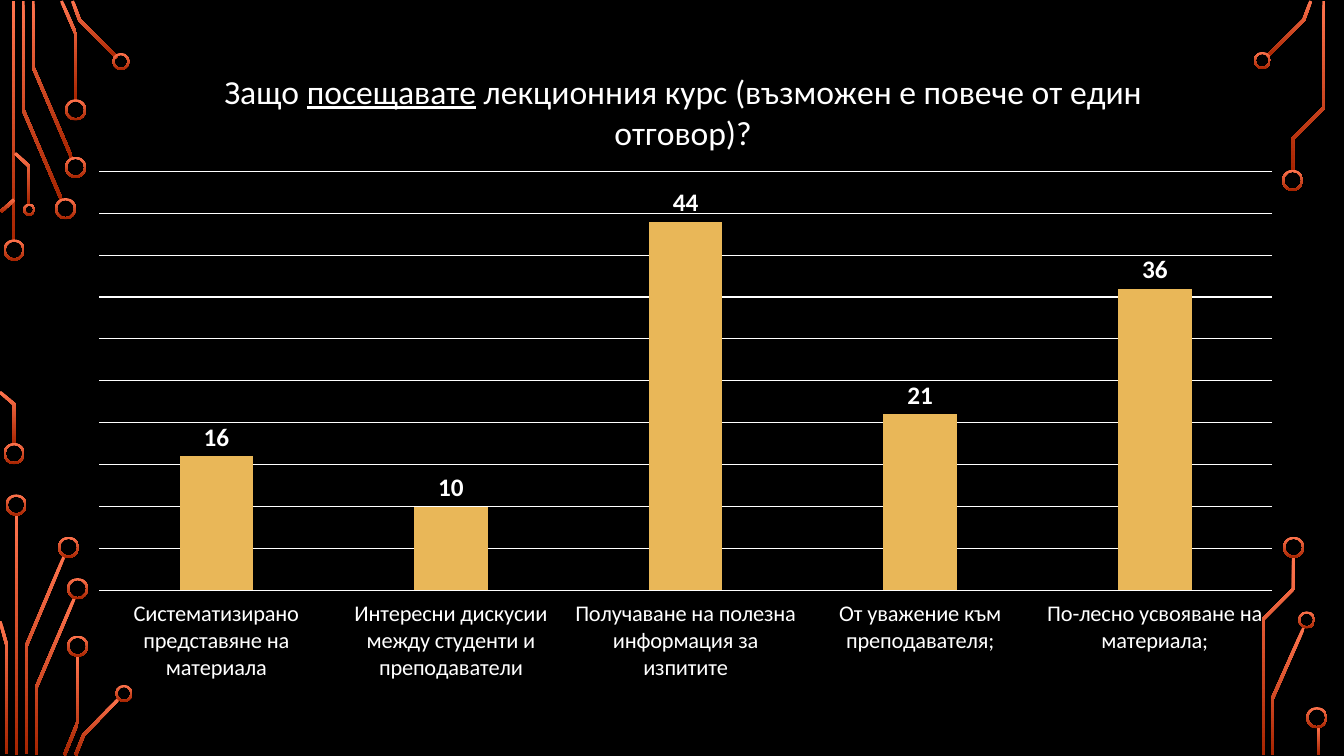
from dataclasses import dataclass
from math import hypot

from lxml.etree import SubElement
from pptx import Presentation
from pptx.chart.data import CategoryChartData
from pptx.dml.color import RGBColor
from pptx.enum.chart import XL_CHART_TYPE as ChartType
from pptx.enum.chart import XL_LABEL_POSITION as LabelPosition
from pptx.enum.chart import XL_TICK_LABEL_POSITION as TickLabels
from pptx.enum.chart import XL_TICK_MARK as TickMark
from pptx.enum.shapes import MSO_SHAPE as Preset
from pptx.oxml.ns import qn
from pptx.util import Inches, Pt

BLACK = RGBColor(0x00, 0x00, 0x00)
WHITE = RGBColor(0xFF, 0xFF, 0xFF)
GOLD = RGBColor(0xE9, 0xB7, 0x58)
ORANGE = RGBColor(0xFF, 0x74, 0x4E)
RUST = RGBColor(0xA6, 0x24, 0x00)
FONT = "Calibri"
TRACE_WIDTH = 0.03
RING_WALL = 0.02


@dataclass(frozen=True)
class Ring:
    x: float  # centre
    y: float
    size: float = 0.21


@dataclass(frozen=True)
class Bar:
    left: float
    top: float
    height: float


@dataclass(frozen=True)
class Trace:
    points: tuple[tuple[float, float], ...]  # centre line


RINGS = [
    # Top left
    Ring(0.14, 2.48), Ring(0.65, 2.07), Ring(0.75, 1.66), Ring(0.75, 1.09),
    Ring(1.2, 0.61, 0.17), Ring(0.29, 2.08, 0.12),
    # Bottom left
    Ring(0.14, 4.5), Ring(0.16, 5.01), Ring(0.68, 5.43), Ring(0.77, 5.84),
    Ring(0.77, 6.41), Ring(1.23, 6.88, 0.17),
    # Right
    Ring(12.52, 0.6, 0.17), Ring(12.82, 1.79), Ring(12.96, 6.15, 0.17),
    Ring(12.83, 5.43), Ring(13.06, 7.12),
]
BARS = [Bar(0.12, 0.01, 2.39), Bar(0.15, 5.1, 2.39), Bar(13.06, 7.21, 0.28)]
TRACES = [
    # Top left
    Trace(((0.23, 0.01), (0.23, 1.09), (0.61, 1.98))),
    Trace(((0.33, 0.01), (0.33, 0.67), (0.71, 1.56))),
    Trace(((0.61, 0.01), (0.75, 0.33), (0.75, 1))),
    Trace(((0.72, 0.01), (0.79, 0.2), (1.16, 0.57))),
    Trace(((0.01, 2.1), (0.14, 1.98))),
    Trace(((0.15, 1.52), (0.29, 1.65), (0.29, 2.03))),
    # Bottom left
    Trace(((0, 3.89), (0.14, 4.01), (0.14, 4.41))),
    Trace(((0.26, 7.48), (0.26, 6.41), (0.64, 5.51))),
    Trace(((0, 6.16), (0.07, 6.41), (0.07, 7.48))),
    Trace(((0.36, 7.49), (0.36, 6.82), (0.74, 5.93))),
    Trace(((0.64, 7.49), (0.77, 7.17), (0.77, 6.5))),
    Trace(((0.75, 7.49), (0.83, 7.29), (1.18, 6.93))),
    # Right
    Trace(((12.57, 0.56), (12.93, 0.2), (13, 0.01))),
    Trace(((12.82, 1.69), (12.82, 1.38), (13.13, 1.07), (13.13, 0.01))),
    Trace(((12.62, 7.49), (12.62, 6.93), (12.93, 6.23))),
    Trace(((12.53, 7.49), (12.53, 6.14), (12.83, 5.84), (12.83, 5.52))),
]

ANSWERS = {
    "Систематизирано представяне на материала": 16,
    "Интересни дискусии между студенти и преподаватели": 10,
    "Получаване на полезна информация за изпитите": 44,
    "От уважение към преподавателя;": 21,
    "По-лесно усвояване на материала;": 36,
}
QUESTION = [
    ("Защо ", False),
    ("посещавате", True),
    (" лекционния курс (възможен е повече от един отговор)?", False),
]


def set_values(target, values: dict) -> None:
    for attribute, value in values.items():
        setattr(target, attribute, value)


def set_font(font, size: int, bold: bool = False, underline: bool = False) -> None:
    set_values(font, {"name": FONT, "size": Pt(size), "bold": bold, "underline": underline})
    font.color.rgb = WHITE


def set_line(line) -> None:
    line.color.rgb = WHITE
    line.width = Pt(0.75)


def paint_copper(shape) -> None:
    shape.shadow.inherit = False
    shape.line.fill.background()
    shape.fill.gradient()
    shape.fill.gradient_angle = 270
    for stop, position, color in zip(shape.fill.gradient_stops, (0, 1), (ORANGE, RUST)):
        stop.position = position
        stop.color.rgb = color


def draw_ring(shapes, ring: Ring) -> None:
    corner = (Inches(ring.x - ring.size / 2), Inches(ring.y - ring.size / 2))
    donut = shapes.add_shape(Preset.DONUT, *corner, Inches(ring.size), Inches(ring.size))
    donut.adjustments[0] = RING_WALL / ring.size
    paint_copper(donut)


def draw_bar(shapes, bar: Bar) -> None:
    box = (bar.left, bar.top, TRACE_WIDTH, bar.height)
    paint_copper(shapes.add_shape(Preset.RECTANGLE, *map(Inches, box)))


def draw_trace(shapes, trace: Trace) -> None:
    """Widen the centre line to a band with mitred corners."""
    normals = []
    for (x1, y1), (x2, y2) in zip(trace.points, trace.points[1:]):
        length = hypot(x2 - x1, y2 - y1)
        normals.append(((y1 - y2) / length, (x2 - x1) / length))
    one_side, other_side = [], []
    for (x, y), (ax, ay), (bx, by) in zip(
        trace.points, normals[:1] + normals, normals + normals[-1:]
    ):
        reach = TRACE_WIDTH / 2 / (1 + ax * bx + ay * by)
        dx, dy = (ax + bx) * reach, (ay + by) * reach
        one_side.append((Inches(x + dx), Inches(y + dy)))
        other_side.append((Inches(x - dx), Inches(y - dy)))
    outline = one_side + other_side[::-1]
    builder = shapes.build_freeform(*outline[0])
    builder.add_line_segments(outline[1:], close=True)
    paint_copper(builder.convert_to_shape())


def place_part(part, index: int, position: dict[str, float], inner: bool = False) -> None:
    """Give a chart part a fixed place, as fractions of the chart."""
    for old_layout in part.findall(qn("c:layout")):
        part.remove(old_layout)
    layout = SubElement(part, qn("c:layout"))
    part.insert(index, layout)
    manual = SubElement(layout, qn("c:manualLayout"))
    entries = {"layoutTarget": "inner"} if inner else {}
    entries |= {"xMode": "edge", "yMode": "edge"} | position
    for tag, value in entries.items():
        SubElement(manual, qn(f"c:{tag}")).set("val", str(value))


def add_answers_chart(shapes) -> None:
    answers = CategoryChartData()
    answers.categories = list(ANSWERS)
    answers.add_series("Series 1", list(ANSWERS.values()))
    box = map(Inches, (0.74, 0.48, 12.12, 6.35))
    chart = shapes.add_chart(ChartType.COLUMN_CLUSTERED, *box, answers).chart
    chart.has_legend = False
    set_font(chart.font, 10)

    # Question above the columns
    question = chart.chart_title.text_frame.paragraphs[0]
    set_font(question.font, 24)
    for text, underline in QUESTION:
        run = question.add_run()
        run.text = text
        set_font(run.font, 24, underline=underline)
    place_part(chart.chart_title._element, 1, {"x": 0.12, "y": 0.03})

    # Columns and their values
    plot = chart.plots[0]
    set_values(plot, {"gap_width": 219, "overlap": -27, "vary_by_categories": False})
    columns = plot.series[0]
    columns.format.fill.solid()
    columns.format.fill.fore_color.rgb = GOLD
    labels = columns.data_labels
    set_values(labels, {"show_value": True, "position": LabelPosition.OUTSIDE_END})
    set_font(labels.font, 18, bold=True)

    # Axes
    no_ticks = {"major_tick_mark": TickMark.NONE, "minor_tick_mark": TickMark.NONE}
    set_values(chart.category_axis, no_ticks | {"tick_label_position": TickLabels.LOW})
    set_font(chart.category_axis.tick_labels.font, 16)
    set_line(chart.category_axis.format.line)
    scale = {"minimum_scale": 0, "maximum_scale": 50, "major_unit": 5}
    set_values(chart.value_axis, no_ticks | scale | {"visible": False, "has_major_gridlines": True})
    set_line(chart.value_axis.major_gridlines.format.line)
    plot_area = chart._chartSpace.chart.plotArea
    place_part(plot_area, 0, {"x": 0.02, "y": 0.192, "w": 0.96, "h": 0.655}, inner=True)


def main() -> None:
    deck = Presentation()
    set_values(deck, {"slide_width": Inches(13.33), "slide_height": Inches(7.5)})
    slide = deck.slides.add_slide(deck.slide_layouts[6])
    slide.background.fill.solid()
    slide.background.fill.fore_color.rgb = BLACK

    # Circuit board decoration
    for parts, draw in ((BARS, draw_bar), (TRACES, draw_trace), (RINGS, draw_ring)):
        for part in parts:
            draw(slide.shapes, part)

    add_answers_chart(slide.shapes)
    deck.save("out.pptx")


if __name__ == "__main__":
    main()
